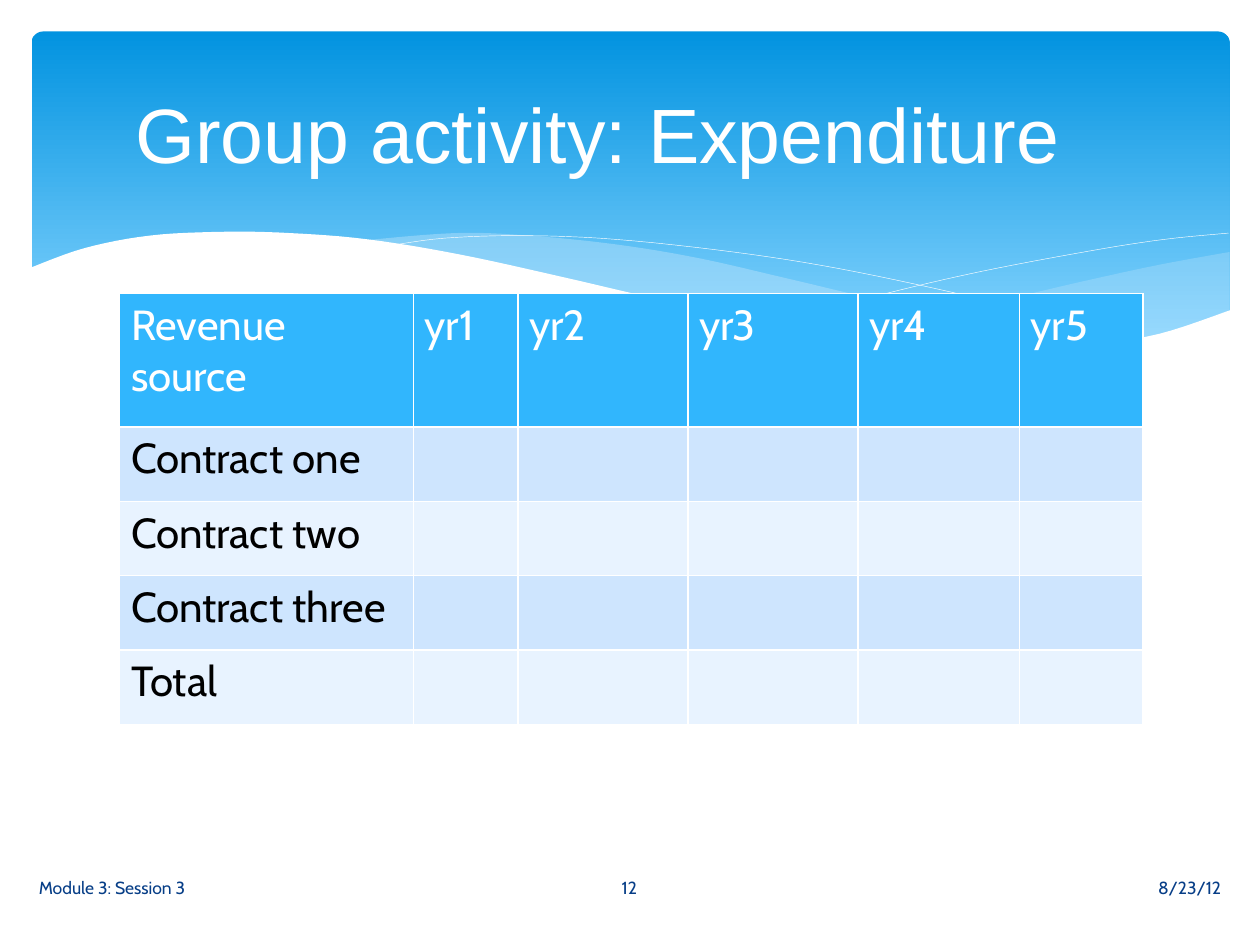
"""Build the group activity slide: a waved banner, an expenditure table and a footer."""
from dataclasses import dataclass

from lxml.etree import SubElement
from pptx import Presentation
from pptx.dml.color import RGBColor
from pptx.enum.shapes import MSO_SHAPE as Shape
from pptx.enum.text import MSO_ANCHOR as Anchor, PP_ALIGN as Align
from pptx.oxml import parse_xml
from pptx.oxml.ns import nsdecls, qn
from pptx.util import Inches, Pt


@dataclass(frozen=True)
class Theme:
    banner: tuple = ((0, "0293E0"), (0.9, "83D3FE"))
    mist: str = "C6E7FC"
    white: str = "FFFFFF"
    black: str = "000000"
    navy: str = "073E87"
    header: str = "31B6FD"
    bands: tuple = ("CEE5FE", "E8F3FF")
    title_font: str = "Arial"
    body_font: str = "Cabin"
    title_size: int = 44
    table_size: int = 24
    footer_size: int = 10
    border: float = 1
    hairline: float = 0.25


THEME = Theme()

TITLE = "Group activity: Expenditure"
TITLE_BOX = (0.5, 0.37, 9, 1.37)
TITLE_RIGHT_MARGIN = 0.61

HEADERS = ["Revenue source", "yr1", "yr2", "yr3", "yr4", "yr5"]
ROW_LABELS = ["Contract one", "Contract two", "Contract three", "Total"]
COLUMN_WIDTHS = [2.33, 0.83, 1.35, 1.35, 1.28, 0.98]
HEADER_HEIGHT, ROW_HEIGHT = 1.06, 0.59
TABLE_LEFT, TABLE_TOP = 0.95, 2.33
CELL_MARGIN = 0.09

FOOTER_TOP, FOOTER_HEIGHT = 6.84, 0.4
FOOTERS = [
    ("8/23/12", 5.65, 4.14, Align.RIGHT),
    ("Module 3: Session 3", 0.21, 4.14, Align.LEFT),
    ("12", 4.36, 1.27, Align.CENTER),
]

BANNER_BOX = (0.25, 0.25, 9.51, 2.7)
BANNER_ROUNDING = 0.034
STEPS_PER_SPAN = 6

RIGHT_MIST_TOP = [(9.76, 2), (9.21, 2.1), (8.61, 2.23), (7.79, 2.42), (7.06, 2.57), (6.61, 2.65)]
RIGHT_MIST_BOTTOM = [(6.61, 2.65), (7.19, 2.72), (7.69, 2.77), (8.24, 2.77), (8.81, 2.73),
                     (9.35, 2.62), (9.76, 2.47)]
MIDDLE_MIST_TOP = [(8.93, 2.73), (8.07, 2.6), (7.06, 2.4), (6.29, 2.22), (5.55, 2.05),
                   (4.89, 1.94), (4.2, 1.87), (3.61, 1.85), (2.86, 1.91)]
MIDDLE_MIST_BOTTOM = [(2.86, 1.91), (3.62, 2.03), (4.49, 2.22), (5.3, 2.4), (6.01, 2.55),
                      (6.8, 2.68), (7.48, 2.76), (8.18, 2.78), (8.93, 2.73)]
FALLING_CURVE = [(3.09, 1.95), (3.53, 1.89), (4.16, 1.87), (4.89, 1.9), (5.82, 2),
                 (6.65, 2.13), (7.6, 2.33), (8.31, 2.51), (9.07, 2.72)]
RISING_CURVE = [(6.13, 2.57), (6.95, 2.35), (7.76, 2.16), (8.66, 1.99), (9.24, 1.9), (9.75, 1.85)]
WAVE_CREST = [(9.77, 2.46), (9.2, 2.65), (8.63, 2.74), (8.09, 2.77), (7.44, 2.74),
              (6.68, 2.65), (6.03, 2.54), (5.29, 2.39), (4.47, 2.2), (3.65, 2.02),
              (2.92, 1.9), (2.3, 1.85), (1.77, 1.84), (1.19, 1.87), (0.67, 1.97), (0.23, 2.13)]
WAVE_FLOOR = [(0.23, 3.29), (9.77, 3.29)]

CURVES = [FALLING_CURVE, RISING_CURVE]
MISTS = [
    (RIGHT_MIST_TOP, RIGHT_MIST_BOTTOM, 29),
    (MIDDLE_MIST_TOP, MIDDLE_MIST_BOTTOM, 40),
]


def rgb(value):
    return RGBColor.from_string(value)


def inches(values):
    return [Inches(value) for value in values]


def fill_solid(target, color):
    target.fill.solid()
    target.fill.fore_color.rgb = rgb(color)


def style_text(frame, font, size, color, align=Align.LEFT):
    for para in frame.paragraphs:
        para.alignment = align
        for span in para.runs:
            span.font.name, span.font.size = font, Pt(size)
            span.font.color.rgb = rgb(color)


def spline(before, start, end, after, t):
    """Return one Catmull-Rom coordinate between start and end."""
    return 0.5 * (2 * start + (end - before) * t
                  + (2 * before - 5 * start + 4 * end - after) * t ** 2
                  + (3 * start - before - 3 * end + after) * t ** 3)


def smooth(knots):
    """Return points on a smooth curve through the knots."""
    padded = [knots[0], *knots, knots[-1]]
    points = [
        tuple(spline(*axis, step / STEPS_PER_SPAN) for axis in zip(*neighbours))
        for neighbours in zip(padded, padded[1:], padded[2:], padded[3:])
        for step in range(STEPS_PER_SPAN)
    ]
    return points + [knots[-1]]


def draw_outline(page, points, closed):
    start, *others = [tuple(inches(point)) for point in points]
    builder = page.shapes.build_freeform(*start)
    builder.add_line_segments(others, close=closed)
    outline = builder.convert_to_shape()
    outline.shadow.inherit = False
    return outline


def add_area(page, points, color, opacity=100):
    area = draw_outline(page, points, closed=True)
    area.line.fill.background()
    fill_solid(area, color)
    tint = area._element.spPr.find(f"{qn('a:solidFill')}/{qn('a:srgbClr')}")
    SubElement(tint, qn("a:alpha"), val=str(opacity * 1000))


def add_curve(page, knots):
    curve = draw_outline(page, smooth(knots), closed=False)
    curve.fill.background()
    curve.line.color.rgb = rgb(THEME.white)
    curve.line.width = Pt(THEME.hairline)


def add_banner(page):
    banner = page.shapes.add_shape(Shape.ROUNDED_RECTANGLE, *inches(BANNER_BOX))
    banner.adjustments[0] = BANNER_ROUNDING
    banner.shadow.inherit = False
    banner.line.fill.background()
    banner.fill.gradient()
    banner.fill.gradient_angle = 270
    for stop, (position, color) in zip(banner.fill.gradient_stops, THEME.banner):
        stop.position = position
        stop.color.rgb = rgb(color)


def add_waves(page):
    for top, bottom, opacity in MISTS:
        add_area(page, smooth(top) + smooth(bottom), THEME.mist, opacity)
    for knots in CURVES:
        add_curve(page, knots)
    add_area(page, smooth(WAVE_CREST) + WAVE_FLOOR, THEME.white)


def set_borders(cell):
    properties = cell._tc.get_or_add_tcPr()
    for index, side in enumerate("LRTB"):
        properties.insert(index, parse_xml(
            f'<a:ln{side} {nsdecls("a")} w="{Pt(THEME.border)}"><a:solidFill>'
            f'<a:srgbClr val="{THEME.white}"/></a:solidFill></a:ln{side}>'))


def fill_row(row, texts, fill, ink):
    for cell, text in zip(row.cells, texts):
        cell.text_frame.text = text
        cell.margin_left = cell.margin_right = Inches(CELL_MARGIN)
        style_text(cell.text_frame, THEME.body_font, THEME.table_size, ink)
        fill_solid(cell, fill)
        set_borders(cell)


def add_expenditure_table(page):
    heights = [HEADER_HEIGHT] + [ROW_HEIGHT] * len(ROW_LABELS)
    size = (sum(COLUMN_WIDTHS), sum(heights))
    table = page.shapes.add_table(
        len(heights), len(HEADERS), *inches((TABLE_LEFT, TABLE_TOP, *size))).table
    for column, width in zip(table.columns, COLUMN_WIDTHS):
        column.width = Inches(width)
    for row, height in zip(table.rows, heights):
        row.height = Inches(height)
    header_row, *body_rows = table.rows
    fill_row(header_row, HEADERS, THEME.header, THEME.white)
    for index, (row, label) in enumerate(zip(body_rows, ROW_LABELS)):
        texts = [label] + [""] * (len(HEADERS) - 1)
        fill_row(row, texts, THEME.bands[index % len(THEME.bands)], THEME.black)


def place_title(page):
    title = page.shapes.title
    title.left, title.top, title.width, title.height = inches(TITLE_BOX)
    frame = title.text_frame
    frame.text = TITLE
    frame.vertical_anchor = Anchor.MIDDLE
    frame.margin_right = Inches(TITLE_RIGHT_MARGIN)
    style_text(frame, THEME.title_font, THEME.title_size, THEME.white, Align.CENTER)
    title._element.getparent().append(title._element)


def add_footer(page, text, left, width, align):
    box = page.shapes.add_textbox(*inches((left, FOOTER_TOP, width, FOOTER_HEIGHT)))
    frame = box.text_frame
    frame.word_wrap = True
    frame.vertical_anchor = Anchor.MIDDLE
    frame.text = text
    style_text(frame, THEME.body_font, THEME.footer_size, THEME.navy, align)


def main():
    deck = Presentation()
    deck.slide_width, deck.slide_height = Inches(10), Inches(7.5)
    page = deck.slides.add_slide(deck.slide_layouts.get_by_name("Title Only"))
    add_banner(page)
    add_waves(page)
    add_expenditure_table(page)
    place_title(page)
    for footer in FOOTERS:
        add_footer(page, *footer)
    deck.save("out.pptx")


if __name__ == "__main__":
    main()
